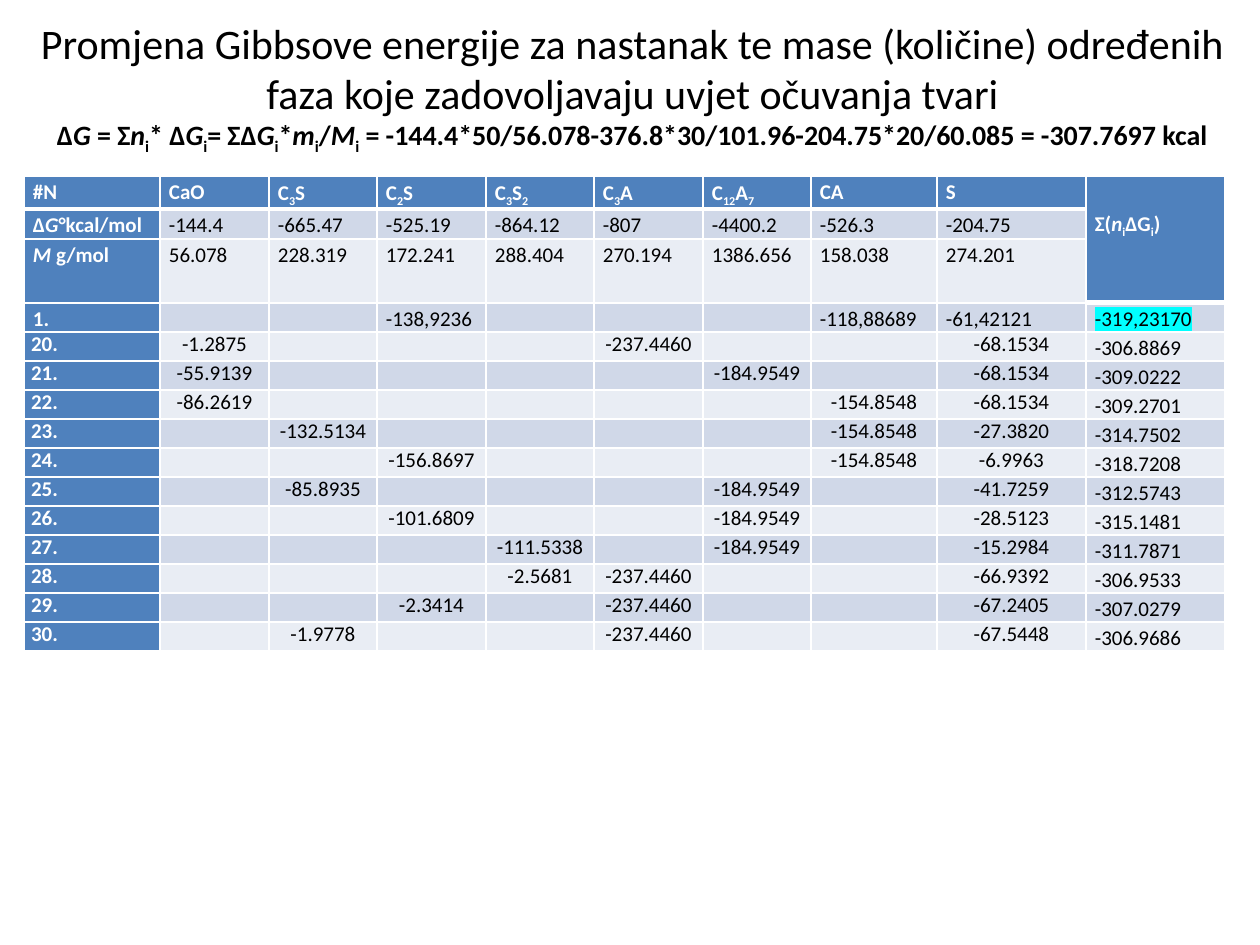
from itertools import groupby

from lxml.etree import SubElement
from pptx import Presentation
from pptx.dml.color import RGBColor
from pptx.enum.text import MSO_ANCHOR, PP_ALIGN
from pptx.oxml.ns import qn
from pptx.util import Pt

PX = 914400 / 126
BLACK = RGBColor(0x00, 0x00, 0x00)
WHITE = RGBColor(0xFF, 0xFF, 0xFF)
BLUE = RGBColor(0x4F, 0x81, 0xBD)
BAND_DARK = RGBColor(0xD0, 0xD8, 0xE8)
BAND_LIGHT = RGBColor(0xE9, 0xED, 0xF4)
CYAN = RGBColor(0x00, 0xFF, 0xFF)

# Runs are (text, style) pairs; style is "", "italic" or "sub"
TITLE = ("Promjena Gibbsove energije za nastanak te mase (količine) određenih "
         "faza koje zadovoljavaju uvjet očuvanja tvari")
EQUATION = [
    ("Δ", ""), ("G", "italic"), (" = Σ", ""), ("n", "italic"), ("i", "sub"),
    ("* Δ", ""), ("G", "italic"), ("i", "sub"), ("= ΣΔ", ""), ("G", "italic"),
    ("i", "sub"), ("*", ""), ("m", "italic"), ("i", "sub"), ("/", ""),
    ("M", "italic"), ("i", "sub"),
    (" = -144.4*50/56.078-376.8*30/101.96-204.75*20/60.085 = -307.7697 kcal", ""),
]
SUM_LABEL = [("Σ(", ""), ("n", "italic"), ("i", "sub"), ("ΔG", ""), ("i", "sub"), (")", "")]
GIBBS_LABEL = [("Δ", ""), ("G", "italic"), ("°kcal/mol", "")]
MASS_LABEL = [("M", "italic"), (" g/mol", "")]

PHASES = ["CaO", "C3S", "C2S", "C3S2", "C3A", "C12A7", "CA", "S"]
GIBBS = ["-144.4", "-665.47", "-525.19", "-864.12", "-807", "-4400.2", "-526.3", "-204.75"]
MASSES = ["56.078", "228.319", "172.241", "288.404", "270.194", "1386.656", "158.038", "274.201"]
# Row number, contribution of each phase present, sum
COMBINATIONS = [
    ("1.", {"C2S": "-138,9236", "CA": "-118,88689", "S": "-61,42121"}, "-319,23170"),
    ("20.", {"CaO": "-1.2875", "C3A": "-237.4460", "S": "-68.1534"}, "-306.8869"),
    ("21.", {"CaO": "-55.9139", "C12A7": "-184.9549", "S": "-68.1534"}, "-309.0222"),
    ("22.", {"CaO": "-86.2619", "CA": "-154.8548", "S": "-68.1534"}, "-309.2701"),
    ("23.", {"C3S": "-132.5134", "CA": "-154.8548", "S": "-27.3820"}, "-314.7502"),
    ("24.", {"C2S": "-156.8697", "CA": "-154.8548", "S": "-6.9963"}, "-318.7208"),
    ("25.", {"C3S": "-85.8935", "C12A7": "-184.9549", "S": "-41.7259"}, "-312.5743"),
    ("26.", {"C2S": "-101.6809", "C12A7": "-184.9549", "S": "-28.5123"}, "-315.1481"),
    ("27.", {"C3S2": "-111.5338", "C12A7": "-184.9549", "S": "-15.2984"}, "-311.7871"),
    ("28.", {"C3S2": "-2.5681", "C3A": "-237.4460", "S": "-66.9392"}, "-306.9533"),
    ("29.", {"C2S": "-2.3414", "C3A": "-237.4460", "S": "-67.2405"}, "-307.0279"),
    ("30.", {"C3S": "-1.9778", "C3A": "-237.4460", "S": "-67.5448"}, "-306.9686"),
]
COLUMN_WIDTHS = [136, 109, 108, 109, 108, 109, 108, 126, 149, 139]
ROW_HEIGHTS = [31, 30, 62] + [29] * len(COMBINATIONS)


def px(length):
    return round(length * PX)


def plain(text):
    return [(text, "")] if text else []


def formula_runs(formula):
    return [("".join(group), "sub" if digits else "")
            for digits, group in groupby(formula, str.isdigit)]


class SlideWriter:
    def __init__(self, slide, font_name="Calibri", cell_size=12):
        self.slide = slide
        self.font_name = font_name
        self.cell_size = cell_size

    def add_runs(self, paragraph, runs, size, color, bold=False, highlight=None):
        for text, style in runs:
            run = paragraph.add_run()
            run.text = text
            font = run.font
            font.name, font.size, font.bold = self.font_name, Pt(size), bold
            font.italic = style == "italic"
            font.color.rgb = color
            properties = run._r.get_or_add_rPr()
            if style == "sub":
                properties.set("baseline", "-25000")
            if highlight is not None:
                mark = SubElement(properties, qn("a:highlight"))
                SubElement(mark, qn("a:srgbClr"), val=str(highlight))
                properties.find(qn("a:solidFill")).addnext(mark)

    def title(self, left, top, width, height, text, equation):
        shape = self.slide.shapes.add_textbox(px(left), px(top), px(width), px(height))
        frame = shape.text_frame
        frame.word_wrap = True
        frame.vertical_anchor = MSO_ANCHOR.MIDDLE
        paragraph = frame.paragraphs[0]
        paragraph.alignment = PP_ALIGN.CENTER
        self.add_runs(paragraph, plain(text), 24, BLACK)
        paragraph.add_line_break()
        self.add_runs(paragraph, equation, 16, BLACK, bold=True)

    def table(self, left, top, widths, heights):
        frame = self.slide.shapes.add_table(len(heights), len(widths), px(left), px(top),
                                            px(sum(widths)), px(sum(heights)))
        for column, width in zip(frame.table.columns, widths):
            column.width = px(width)
        for row, height in zip(frame.table.rows, heights):
            row.height = px(height)
        return frame.table

    def borders(self, cell, top=1, bottom=1):
        properties = cell._tc.get_or_add_tcPr()
        for index, (side, width) in enumerate(
                [("lnL", 1), ("lnR", 1), ("lnT", top), ("lnB", bottom)]):
            line = SubElement(properties, qn("a:" + side), w=str(Pt(width)))
            fill = SubElement(line, qn("a:solidFill"))
            SubElement(fill, qn("a:srgbClr"), val=str(WHITE))
            properties.insert(index, line)

    def cell(self, cell, runs, fill, header=False, centered=False, inset=9, top_inset=0,
             spacing=1.15, highlight=None, top=1, bottom=1):
        cell.fill.solid()
        cell.fill.fore_color.rgb = fill
        self.borders(cell, top, bottom)
        cell.margin_left = cell.margin_right = px(inset)
        cell.margin_top, cell.margin_bottom = px(top_inset), 0
        paragraph = cell.text_frame.paragraphs[0]
        if not runs:
            SubElement(paragraph._p, qn("a:endParaRPr"), sz=str(self.cell_size * 100))
            return
        paragraph.line_spacing = spacing
        paragraph.alignment = PP_ALIGN.CENTER if centered else PP_ALIGN.LEFT
        self.add_runs(paragraph, runs, self.cell_size, WHITE if header else BLACK,
                      header, highlight)


def fill_table(writer, table):
    # Header row, with the sum heading spanning three rows
    for column, phase in enumerate(["#N"] + PHASES):
        writer.cell(table.cell(0, column), formula_runs(phase), BLUE, header=True, bottom=3)
    last = len(PHASES) + 1
    table.cell(0, last).merge(table.cell(2, last))
    writer.cell(table.cell(0, last), SUM_LABEL, BLUE, header=True, top_inset=31, bottom=3)
    for row in (1, 2):
        writer.cell(table.cell(row, last), [], BLUE, bottom=3 if row == 2 else 1)

    # Properties of the phases
    properties = [(GIBBS_LABEL, GIBBS, BAND_DARK, 3), (MASS_LABEL, MASSES, BAND_LIGHT, 1)]
    for row, (label, values, band, top) in enumerate(properties, 1):
        writer.cell(table.cell(row, 0), label, BLUE, header=True, top=top)
        for column, value in enumerate(values, 1):
            writer.cell(table.cell(row, column), plain(value), band, top=top)

    # Combinations of phases
    for row, (number, values, total) in enumerate(COMBINATIONS, 3):
        first = row == 3
        band = BAND_DARK if row % 2 else BAND_LIGHT
        layout = {} if first else {"inset": 7, "spacing": 1.0}
        writer.cell(table.cell(row, 0), plain(number), BLUE, header=True, **layout)
        for column, phase in enumerate(PHASES, 1):
            writer.cell(table.cell(row, column), plain(values.get(phase)), band,
                        centered=not first, **layout)
        writer.cell(table.cell(row, last), plain(total), band,
                    highlight=CYAN if first else None, top=3 if first else 1)


def main():
    presentation = Presentation()
    presentation.slide_width, presentation.slide_height = px(1260), px(945)
    writer = SlideWriter(presentation.slides.add_slide(presentation.slide_layouts[6]))
    writer.title(5, 8, 1255, 157, TITLE, EQUATION)
    fill_table(writer, writer.table(24, 176, COLUMN_WIDTHS, ROW_HEIGHTS))
    presentation.save("out.pptx")


if __name__ == "__main__":
    main()
